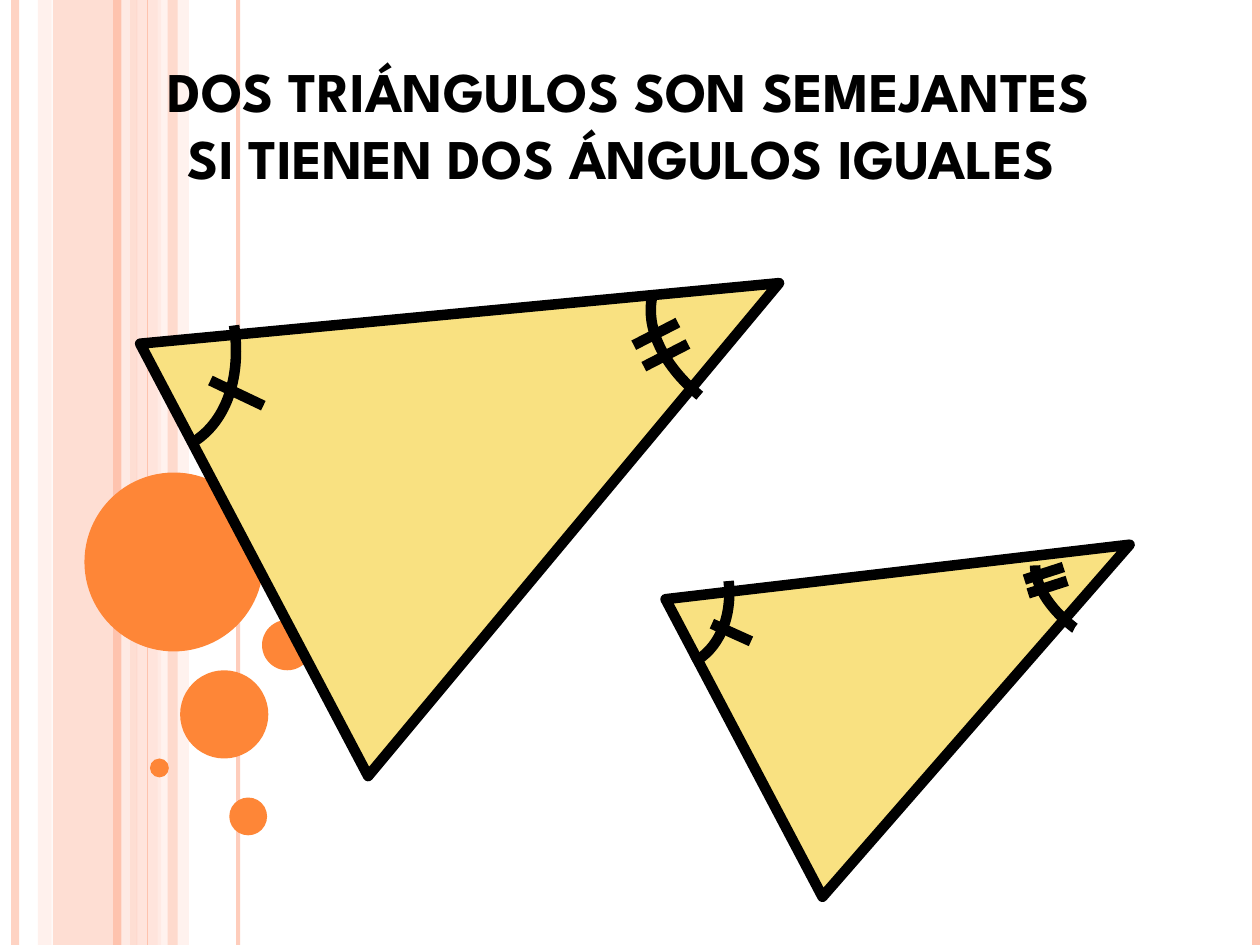
"""Builds a slide on similar triangles that share two equal angles."""
from dataclasses import dataclass
from typing import Optional

from lxml import etree
from pptx import Presentation
from pptx import util as u
from pptx.dml.color import RGBColor
from pptx.enum import shapes, text
from pptx.oxml import ns

COLORS = {"peach": "FEC3AE", "blush": "FFD9CE", "pale": "FFEDE8",
          "orange": "FE8637", "yellow": "F9E181", "black": "000000"}
SLIDE_WIDTH, SLIDE_HEIGHT = 10, 7.5
STROKE = 6
TILT = 62.2
ARC_TILT = 199.2


@dataclass
class Band:
    left: float
    width: float
    color: str
    opacity: int


@dataclass
class Stripe:
    x: float
    weight: float
    color: str = "peach"
    opacity: int = 100


@dataclass
class Bubble:
    left: float
    top: float
    size: float


@dataclass
class Outline:
    kind: shapes.MSO_SHAPE
    box: tuple
    rotation: float
    fill: Optional[str] = None
    adjustments: tuple = ()


@dataclass
class Figure:
    outlines: list
    ticks: list


BANDS = [Band(0.42, 0.67, "peach", 54), Band(0.3, 0.11, "blush", 36),
         Band(1.08, 0.2, "blush", 70), Band(1.25, 0.25, "pale", 71)]
STRIPES = [Stripe(0.12, 4.5, opacity=73), Stripe(1, 4.5, "pale", 83),
           Stripe(0.93, 4.5), Stripe(1.89, 2.25, opacity=82),
           Stripe(1.17, 0.75), Stripe(9.97, 4.5)]
FRONT_BAND = Band(1.33, 0.08, "peach", 51)
BUBBLES = [Bubble(0.67, 3.75, 1.42), Bubble(1.43, 5.32, 0.7), Bubble(1.19, 6.02, 0.15),
           Bubble(1.82, 6.33, 0.3), Bubble(2.08, 4.92, 0.4)]

TRIANGLE = shapes.MSO_SHAPE.ISOSCELES_TRIANGLE
ARC = shapes.MSO_SHAPE.ARC
FIGURES = [
    Figure([Outline(TRIANGLE, (2.16, 0.99, 3.88, 4.71), TILT, "yellow"),
            Outline(ARC, (-0.29, 1.6, 2.44, 1.7), TILT, None, (183.59, 0)),
            Outline(ARC, (5.12, 1.92, 2.6, 1.6), ARC_TILT, None, (188.96, 214.12))],
           [(1.67, 3.02, 2.09, 3.22), (5.38, 2.56, 5.03, 2.74), (5.46, 2.73, 5.11, 2.91)]),
    Figure([Outline(TRIANGLE, (6.1, 3.4, 2.67, 3.46), TILT, "yellow"),
            Outline(ARC, (4.27, 3.89, 1.68, 1.25), TILT, None, (183.59, 0)),
            Outline(ARC, (8.18, 4.14, 1.91, 1.1), ARC_TILT, None, (188.96, 211.95))],
           [(5.65, 4.95, 5.96, 5.09), (8.44, 4.5, 8.13, 4.6), (8.47, 4.61, 8.16, 4.71)]),
]


def paint(fill, color: str, opacity: int = 100) -> None:
    fill.solid()
    fill.fore_color.rgb = RGBColor.from_string(COLORS[color])
    if opacity < 100:
        for swatch in fill.fore_color._xFill.iter(ns.qn("a:srgbClr")):
            etree.SubElement(swatch, ns.qn("a:alpha"), val=str(opacity * 1000))


def add_shape(parent, kind, box: tuple, fill: Optional[str], opacity: int = 100):
    shape = parent.add_shape(kind, *map(u.Inches, box))
    shape.shadow.inherit = False
    if fill:
        paint(shape.fill, fill, opacity)
    else:
        shape.fill.background()
    shape.line.fill.background()
    return shape


def add_line(parent, ends: tuple, color: str, weight: float, opacity: int = 100) -> None:
    line = parent.add_connector(shapes.MSO_CONNECTOR.STRAIGHT, *map(u.Inches, ends))
    line.line.width = u.Pt(weight)
    paint(line.line.fill, color, opacity)
    etree.SubElement(line.element.spPr, ns.qn("a:effectLst"))


def add_band(parent, band: Band) -> None:
    add_shape(parent, shapes.MSO_SHAPE.RECTANGLE,
              (band.left, 0, band.width, SLIDE_HEIGHT), band.color, band.opacity)


def add_backdrop(parent) -> None:
    for band in BANDS:
        add_band(parent, band)
    for stripe in STRIPES:
        add_line(parent, (stripe.x, 0, stripe.x, SLIDE_HEIGHT),
                 stripe.color, stripe.weight, stripe.opacity)
    add_band(parent, FRONT_BAND)
    for bubble in BUBBLES:
        add_shape(parent, shapes.MSO_SHAPE.OVAL,
                  (bubble.left, bubble.top, bubble.size, bubble.size), "orange")


def add_figure(parent, figure: Figure) -> None:
    group = parent.add_group_shape().shapes
    for outline in figure.outlines:
        shape = add_shape(group, outline.kind, outline.box, outline.fill)
        shape.rotation = outline.rotation
        for index, value in enumerate(outline.adjustments):
            shape.adjustments[index] = value
        shape.line.width = u.Pt(STROKE)
        paint(shape.line.fill, "black")
        etree.SubElement(shape.element.spPr.find(ns.qn("a:ln")), ns.qn("a:round"))
    for tick in figure.ticks:
        add_line(group, tick, "black", STROKE)


def write_title(title) -> None:
    title.left, title.top, title.width, title.height = map(u.Inches, (1.06, 0.4, 7.87, 1.72))
    frame = title.text_frame
    frame.word_wrap = True
    frame.auto_size = text.MSO_AUTO_SIZE.SHAPE_TO_FIT_TEXT
    frame.vertical_anchor = text.MSO_ANCHOR.TOP
    paragraph = frame.paragraphs[0]
    paragraph.alignment = text.PP_ALIGN.CENTER
    run = paragraph.add_run()
    run.text = "DOS TRIÁNGULOS SON SEMEJANTES SI TIENEN DOS ÁNGULOS IGUALES "
    run.font.name = "League Spartan"
    run.font.size = u.Pt(32)
    run.font.bold = True
    run.font.color.rgb = RGBColor.from_string(COLORS["black"])


def main() -> None:
    deck = Presentation()
    deck.slide_width, deck.slide_height = u.Inches(SLIDE_WIDTH), u.Inches(SLIDE_HEIGHT)
    slide = deck.slides.add_slide(deck.slide_layouts[5])
    add_backdrop(slide.shapes)
    title = slide.shapes.title
    write_title(title)
    title.element.getparent().append(title.element)
    for figure in FIGURES:
        add_figure(slide.shapes, figure)
    deck.save("out.pptx")


if __name__ == "__main__":
    main()
